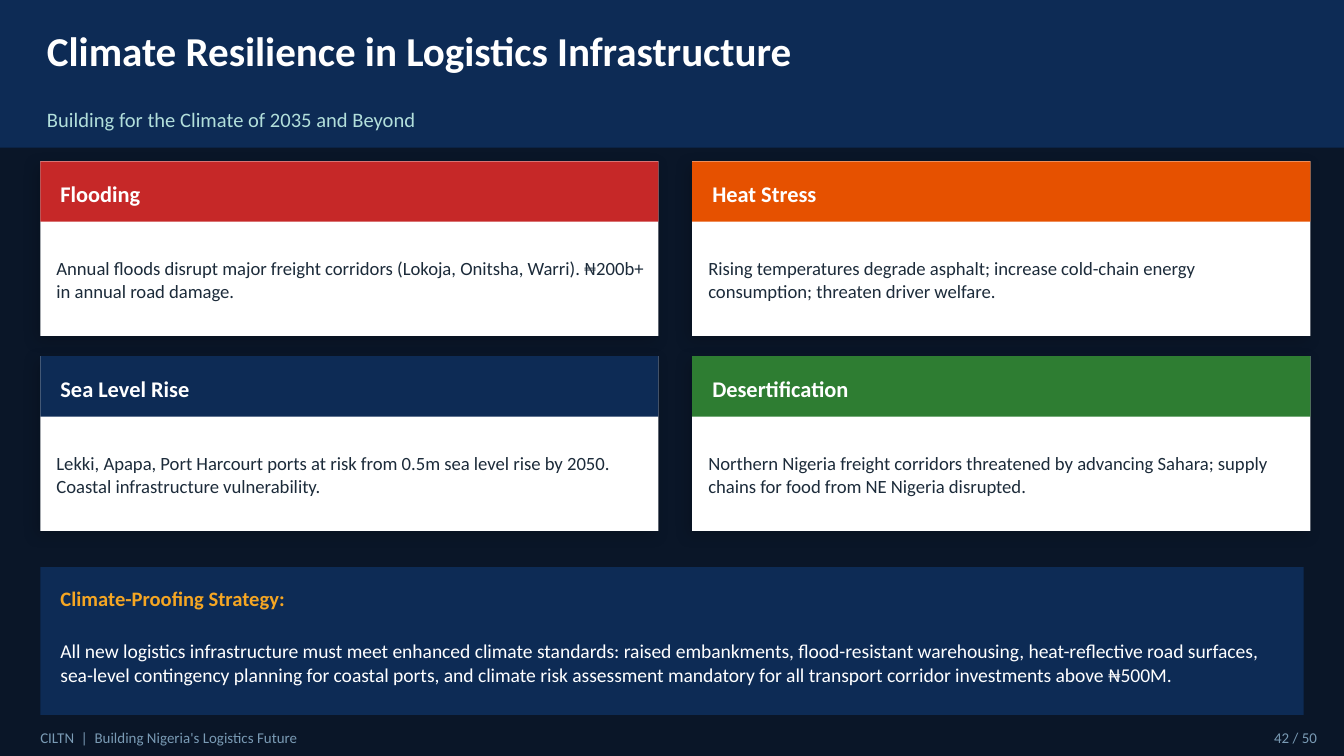
from lxml import etree
from pptx import Presentation
from pptx.dml.color import RGBColor
from pptx.enum.shapes import MSO_SHAPE
from pptx.enum.text import MSO_ANCHOR, PP_ALIGN
from pptx.oxml.ns import qn
from pptx.util import Pt

RECTANGLE = MSO_SHAPE.RECTANGLE
MIDDLE = MSO_ANCHOR.MIDDLE
LEFT, RIGHT = PP_ALIGN.LEFT, PP_ALIGN.RIGHT

SLIDE_W, SLIDE_H = 720, 405
MARGIN = 21.6
CARD_W, CARD_H = 331.2, 93.6
CARD_TOP = 86.4
COLUMN_STEP, ROW_STEP = 349.2, 104.4
FOOTER_TOP = 385.2
FOOTER_H = SLIDE_H - FOOTER_TOP

COLORS = {
    "night": "0A1628",
    "navy": "0D2B55",
    "white": "FFFFFF",
    "mint": "B2DFDB",
    "ink": "1C2B3A",
    "red": "C62828",
    "orange": "E65100",
    "green": "2E7D32",
    "amber": "F5A623",
    "steel": "7A9BB5",
    "black": "000000",
}

TEXT_STYLES = {
    "title": {"size": 22, "bold": True, "color": "white"},
    "subtitle": {"size": 11, "bold": False, "color": "mint"},
    "card_title": {"size": 12, "bold": True, "color": "white"},
    "card_body": {"size": 10, "bold": False, "color": "ink"},
    "strategy_title": {"size": 11, "bold": True, "color": "amber"},
    "strategy_body": {"size": 10.5, "bold": False, "color": "white"},
    "footer": {"size": 8, "bold": False, "color": "steel"},
}

RISKS = [
    ("Flooding", "red",
     "Annual floods disrupt major freight corridors (Lokoja, Onitsha, Warri). "
     "₦200b+ in annual road damage."),
    ("Heat Stress", "orange",
     "Rising temperatures degrade asphalt; increase cold-chain energy "
     "consumption; threaten driver welfare."),
    ("Sea Level Rise", "navy",
     "Lekki, Apapa, Port Harcourt ports at risk from 0.5m sea level rise by "
     "2050. Coastal infrastructure vulnerability."),
    ("Desertification", "green",
     "Northern Nigeria freight corridors threatened by advancing Sahara; "
     "supply chains for food from NE Nigeria disrupted."),
]

STRATEGY = (
    "All new logistics infrastructure must meet enhanced climate standards: "
    "raised embankments, flood-resistant warehousing, heat-reflective road "
    "surfaces, sea-level contingency planning for coastal ports, and climate "
    "risk assessment mandatory for all transport corridor investments above "
    "₦500M."
)


def rgb(color):
    return RGBColor.from_string(COLORS[color])


def add_panel(slide, left, top, width, height, color):
    panel = slide.shapes.add_shape(
        RECTANGLE, Pt(left), Pt(top), Pt(width), Pt(height))
    panel.shadow.inherit = False
    panel.fill.solid()
    panel.fill.fore_color.rgb = rgb(color)
    panel.line.fill.background()
    return panel


def add_soft_shadow(panel):
    effects = panel.fill._xPr.find(qn("a:effectLst"))
    shadow = etree.SubElement(
        effects, qn("a:outerShdw"), blurRad=str(Pt(8)), dist=str(Pt(3)),
        dir=str(135 * 60000), algn="bl", rotWithShape="0")
    tint = etree.SubElement(shadow, qn("a:srgbClr"), val=COLORS["black"])
    etree.SubElement(tint, qn("a:alpha"), val="18000")


def add_text(slide, left, top, width, height, text, style, align=LEFT):
    frame = slide.shapes.add_textbox(
        Pt(left), Pt(top), Pt(width), Pt(height)).text_frame
    frame_format = {
        "word_wrap": True, "vertical_anchor": MIDDLE,
        "margin_left": 0, "margin_right": 0,
        "margin_top": 0, "margin_bottom": 0,
    }
    for name, value in frame_format.items():
        setattr(frame, name, value)
    paragraph = frame.paragraphs[0]
    paragraph.alignment = align
    run = paragraph.add_run()
    run.text = text
    look = TEXT_STYLES[style]
    font_format = {
        "name": "Calibri", "size": Pt(look["size"]), "bold": look["bold"]}
    for name, value in font_format.items():
        setattr(run.font, name, value)
    run.font.color.rgb = rgb(look["color"])


def add_header(slide):
    add_panel(slide, 0, 0, SLIDE_W, 79.2, "navy")
    add_text(slide, 25.2, 3.6, 669.6, 46.8,
             "Climate Resilience in Logistics Infrastructure", "title")
    add_text(slide, 25.2, 50.4, 669.6, 27.36,
             "Building for the Climate of 2035 and Beyond", "subtitle")


def add_risk_card(slide, left, top, title, color, body):
    add_soft_shadow(add_panel(slide, left, top, CARD_W, CARD_H, "white"))
    add_panel(slide, left, top, CARD_W, 32.4, color)
    add_text(slide, left + 10.8, top + 5.76, 309.6, 23.04,
             title, "card_title")
    add_text(slide, left + 8.64, top + 37.44, 315.36, 51.84,
             body, "card_body")


def add_strategy(slide):
    text_left = MARGIN + 10.8
    add_panel(slide, MARGIN, 303.84, 676.8, 79.2, "navy")
    add_text(slide, text_left, 308.16, 216, 25.2,
             "Climate-Proofing Strategy:", "strategy_title")
    add_text(slide, text_left, 332.64, 648, 44.64, STRATEGY, "strategy_body")


def add_footer(slide):
    add_panel(slide, 0, FOOTER_TOP, SLIDE_W, FOOTER_H, "night")
    add_text(slide, 648, FOOTER_TOP, 57.6, FOOTER_H,
             "42 / 50", "footer", RIGHT)
    add_text(slide, MARGIN, FOOTER_TOP, 576, FOOTER_H,
             "CILTN  |  Building Nigeria's Logistics Future", "footer")


def main():
    deck = Presentation()
    deck.slide_width, deck.slide_height = Pt(SLIDE_W), Pt(SLIDE_H)
    slide = deck.slides.add_slide(deck.slide_layouts[6])
    slide.background.fill.solid()
    slide.background.fill.fore_color.rgb = rgb("night")

    add_header(slide)
    for index, (title, color, body) in enumerate(RISKS):
        row, column = divmod(index, 2)
        add_risk_card(slide, MARGIN + column * COLUMN_STEP,
                      CARD_TOP + row * ROW_STEP, title, color, body)
    add_strategy(slide)
    add_footer(slide)
    deck.save("out.pptx")


if __name__ == "__main__":
    main()
